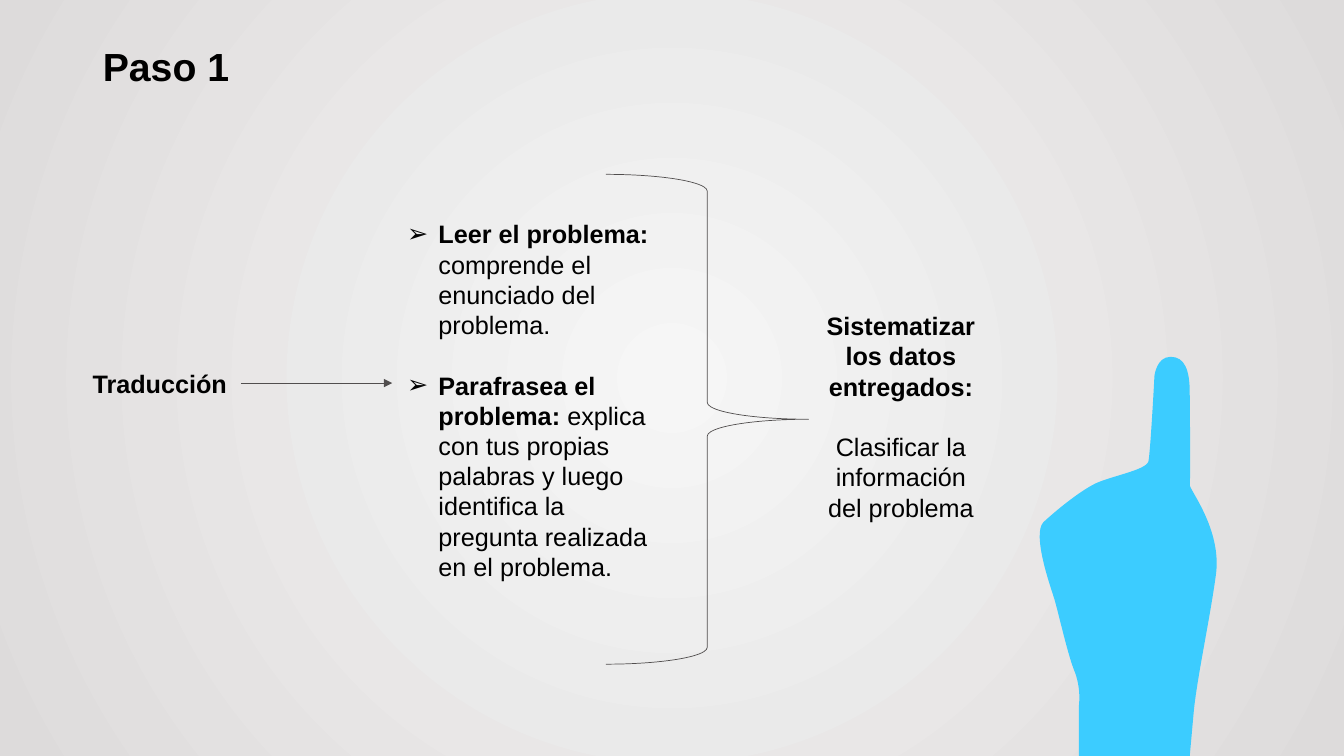
from pptx import Presentation
from pptx.dml.color import RGBColor as Rgb
from pptx.enum.shapes import MSO_CONNECTOR as Conn, MSO_SHAPE as Shape
from pptx.enum.text import MSO_ANCHOR as Anchor, MSO_AUTO_SIZE as Auto, PP_ALIGN as Align
from pptx.oxml import parse_xml
from pptx.oxml.ns import nsdecls, qn
from pptx.util import Inches, Pt

HUES = {"ink": "000000", "line": "514E4E", "hand": "3CCCFF", "mid": "F6F6F6", "edge": "DDDBDB"}
FACE = "Arial"
INDENT = 0.31
GAP = 21.6

LIST = [
    [("Leer el problema: ", True), ("comprende el enunciado del problema.", False)],
    [("Parafrasea el problema: ", True),
     ("explica con tus propias palabras y luego identifica la pregunta realizada en el problema.", False)],
]
SORT = [
    [("Sistematizar los datos entregados:", True)],
    [("Clasificar la información del problema", False)],
]
START = (47, 396)
HAND = [
    [(47, 347), (47, 347), (47, 347)],
    [(47, 347), (50, 329), (42, 310)],
    [(35, 292), (25, 246), (22, 238)],
    [(20, 231), (0, 176), (12, 164)],
    [(25, 152), (46, 135), (61, 127)],
    [(75, 119), (113, 113), (116, 104)],
    [(118, 95), (122, 19), (122, 19)],
    [(122, 19), (124, 0), (138, 0)],
    [(152, 0), (157, 13), (157, 36)],
    [(157, 58), (158, 112), (157, 127)],
    [(156, 131), (189, 171), (183, 216)],
    [(177, 260), (164, 320), (161, 352)],
    [(157, 396), (157, 396), (157, 396)],
]


def rgb(name):
    return Rgb.from_string(HUES[name])


def apply(item, form):
    for key, value in form.items():
        setattr(item, key, value)


def paint(slide):
    fill = slide.background.fill
    fill.gradient()
    for stop, name in zip(fill.gradient_stops, ("mid", "edge")):
        stop.color.rgb = rgb(name)
    grad = slide.element.find(".//" + qn("a:gradFill"))
    grad.replace(grad.find(qn("a:lin")), parse_xml(
        f'<a:path {nsdecls("a")} path="circle">'
        '<a:fillToRect l="50000" t="50000" r="50000" b="50000"/></a:path>'))


def write(para, runs, size):
    for text, bold in runs:
        run = para.add_run()
        run.text = text
        apply(run.font, {"name": FACE, "size": Pt(size), "bold": bold})
        run.font.color.rgb = rgb("ink")


def head(slide, box, text):
    title = slide.shapes.title
    apply(title, dict(zip(("left", "top", "width", "height"), map(Inches, box))))
    frame = title.text_frame
    apply(frame, {"vertical_anchor": Anchor.MIDDLE, "word_wrap": True,
                  "auto_size": Auto.SHAPE_TO_FIT_TEXT})
    para = frame.paragraphs[0]
    apply(para, {"alignment": Align.LEFT, "line_spacing": 0.9})
    write(para, [(text, True)], 28)


def block(slide, box, paras, align=Align.LEFT, mark=None):
    shape = slide.shapes.add_textbox(*map(Inches, box))
    frame = shape.text_frame
    apply(frame, {"word_wrap": True, "auto_size": Auto.SHAPE_TO_FIT_TEXT})
    for i, runs in enumerate(paras):
        para = frame.add_paragraph() if i else frame.paragraphs[0]
        apply(para, {"alignment": align, "space_before": Pt(GAP if i else 0)})
        write(para, runs, 18)
        if mark:
            props = para._p.get_or_add_pPr()
            props.set("marL", str(Inches(INDENT)))
            props.set("indent", str(-Inches(INDENT)))
            for tag in (f'<a:buFont {nsdecls("a")} typeface="{FACE}"/>',
                        f'<a:buChar {nsdecls("a")} char="{mark}"/>'):
                props.append(parse_xml(tag))
    return shape


def stroke(shape):
    shape.line.color.rgb = rgb("line")
    shape.line.width = Pt(0.5)


def arrow(slide, start, end):
    line = slide.shapes.add_connector(Conn.STRAIGHT, 0, 0, *map(Inches, end))
    line.begin_connect(start, 3)
    stroke(line)
    line.line._get_or_add_ln().append(parse_xml(f'<a:tailEnd {nsdecls("a")} type="triangle"/>'))
    line._element.spPr.append(parse_xml(f'<a:effectLst {nsdecls("a")}/>'))


def brace(slide, box):
    shape = slide.shapes.add_shape(Shape.RIGHT_BRACE, *map(Inches, box))
    shape.shadow.inherit = False
    shape.fill.background()
    stroke(shape)


def bend(shape):
    lines = list(shape._element.iter(qn("a:lnTo")))
    for i in range(0, len(lines) - 2, 3):
        curve = parse_xml(f'<a:cubicBezTo {nsdecls("a")}/>')
        lines[i].addprevious(curve)
        for line in lines[i:i + 3]:
            curve.append(line[0])
            line.getparent().remove(line)


def hand(slide, left, top):
    form = slide.shapes.build_freeform(*START, scale=Inches(0.01))
    form.add_line_segments([point for part in HAND for point in part], close=True)
    shape = form.convert_to_shape(Inches(left), Inches(top))
    bend(shape)
    shape.shadow.inherit = False
    shape.fill.solid()
    shape.fill.fore_color.rgb = rgb("hand")
    shape.line.fill.background()


def main():
    deck = Presentation()
    apply(deck, {"slide_width": Inches(13.33), "slide_height": Inches(7.5)})
    slide = deck.slides.add_slide(deck.slide_layouts[5])
    paint(slide)
    head(slide, (0.92, 0.4, 8.91, 0.57), "Paso 1")
    label = block(slide, (0.82, 3.6, 1.57, 0.4), [[("Traducción", True)]])
    arrow(slide, label, (3.89, 3.8))
    block(slide, (3.94, 2.12, 2.71, 4.04), LIST, mark="➢")
    brace(slide, (6.01, 1.73, 2.01, 4.86))
    block(slide, (8.09, 3.03, 1.69, 2.22), SORT, align=Align.CENTER)
    hand(slide, 10.23, 3.54)
    deck.save("out.pptx")


if __name__ == "__main__":
    main()
